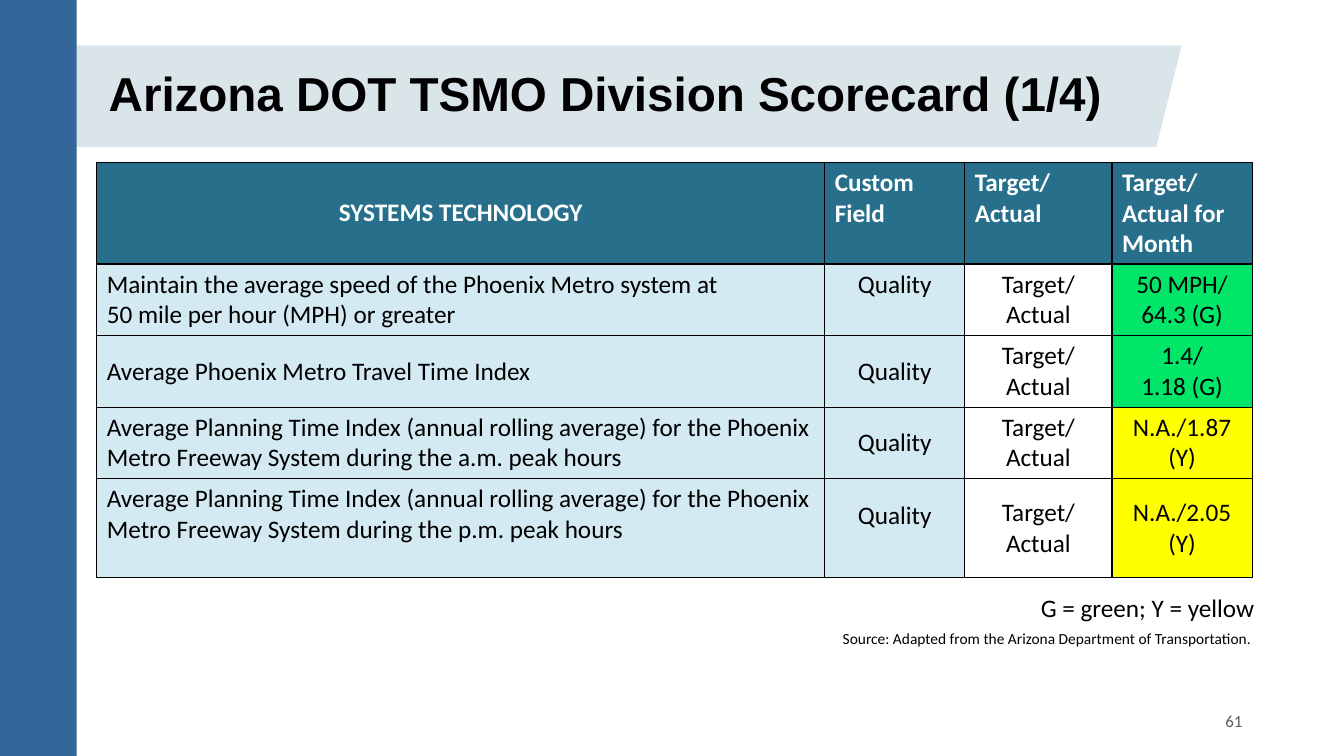
from lxml.etree import SubElement
from pptx import Presentation
from pptx.dml.color import RGBColor
from pptx.enum.shapes import MSO_SHAPE as Shape
from pptx.enum.text import MSO_ANCHOR as Anchor, PP_ALIGN as Align
from pptx.oxml.ns import qn
from pptx.util import Inches, Pt


def paint(color_format, color):
    color_format.rgb = RGBColor.from_string(color)


def write(frame, text, size, color, align, bold=False, font="Calibri"):
    for number, line in enumerate(text.split("\n")):
        para = frame.paragraphs[0] if number == 0 else frame.add_paragraph()
        para.alignment = align
        for part_number, part in enumerate(line.split("\v")):
            if part_number:
                para.add_line_break()
            span = para.add_run()
            span.text = part
            span.font.name = font
            span.font.size = Pt(size)
            span.font.bold = bold
            paint(span.font.color, color)


deck = Presentation()
deck.slide_width = Inches(13.33)
deck.slide_height = Inches(7.5)
page = deck.slides.add_slide(deck.slide_layouts[6])

for preset, left, top, width, height, color in [
    (Shape.PARALLELOGRAM, 0.24, 0.45, 11.48, 1.01, "DAE5EA"),
    (Shape.RECTANGLE, 0, 0, 0.76, 7.5, "336699"),
]:
    panel = page.shapes.add_shape(
        preset, Inches(left), Inches(top), Inches(width), Inches(height))
    panel.shadow.inherit = False
    panel.fill.solid()
    paint(panel.fill.fore_color, color)
    panel.line.fill.background()

for left, top, width, height, text, size, color, align, anchor, bold, font in [
    (0.98, 0.65, 10.3, 0.45, "Arizona DOT TSMO Division Scorecard (1/4)",
     34, "000000", Align.LEFT, Anchor.TOP, True, "Arial"),
    (9.06, 5.83, 3.48, 0.4, "G = green; Y = yellow",
     18, "000000", Align.RIGHT, Anchor.TOP, False, "Calibri"),
    (8.11, 6.19, 4.4, 0.29,
     "Source: Adapted from the Arizona Department of Transportation.",
     11, "000000", Align.RIGHT, Anchor.TOP, False, "Calibri"),
    (9.42, 6.95, 3, 0.4, "61",
     12, "595959", Align.RIGHT, Anchor.MIDDLE, False, "Calibri"),
]:
    box = page.shapes.add_textbox(
        Inches(left), Inches(top), Inches(width), Inches(height))
    frame = box.text_frame
    frame.word_wrap = True
    frame.vertical_anchor = anchor
    write(frame, text, size, color, align, bold, font)
    frame.paragraphs[0].line_spacing = 0.9 if bold else 1.0

GREEN, YELLOW = "01E669", "FFFF00"
planning = ("Average Planning Time Index (annual rolling average) for the "
            "Phoenix Metro Freeway System during the {} peak hours")
measures = [
    ("Maintain the average speed of the Phoenix Metro system at "
     "\v50 mile per hour (MPH) or greater", "50 MPH/\n64.3 (G)", GREEN),
    ("Average Phoenix Metro Travel Time Index", "1.4/\n1.18 (G)", GREEN),
    (planning.format("a.m."), "N.A./1.87 (Y)", YELLOW),
    (planning.format("p.m."), "N.A./2.05 (Y)", YELLOW),
]
rows = [["SYSTEMS TECHNOLOGY", "Custom Field", "Target/ Actual",
         "Target/ Actual for Month"]]
rows += [[name, "Quality", "Target/\nActual", result]
         for name, result, status in measures]
column_widths = [7.22, 1.39, 1.46, 1.39]
row_heights = [1.01, 0.71, 0.71, 0.71, 0.98]
top_anchored = {(0, 1), (0, 2), (0, 3), (1, 1), (4, 0)}

table = page.shapes.add_table(
    len(rows), len(column_widths), Inches(0.96), Inches(1.61),
    Inches(sum(column_widths)), Inches(sum(row_heights))).table
for column, width in zip(table.columns, column_widths):
    column.width = Inches(width)
for row, height in zip(table.rows, row_heights):
    row.height = Inches(height)

for r, row in enumerate(rows):
    for c, text in enumerate(row):
        cell = table.cell(r, c)
        header = r == 0
        centered = (c == 0) if header else (c > 0)
        write(cell.text_frame, text, 18, "FFFFFF" if header else "000000",
              Align.CENTER if centered else Align.LEFT, header)
        cell.vertical_anchor = Anchor.TOP if (r, c) in top_anchored else Anchor.MIDDLE
        properties = cell._tc.get_or_add_tcPr()
        for side in ("a:lnL", "a:lnR", "a:lnT", "a:lnB"):
            border = SubElement(properties, qn(side), w=str(Pt(1)))
            fill = SubElement(border, qn("a:solidFill"))
            SubElement(fill, qn("a:srgbClr"), val="000000")
        cell.fill.solid()
        if header:
            color = "276F8B"
        else:
            color = ["D4EAF3", "D4EAF3", "FFFFFF", measures[r - 1][2]][c]
        paint(cell.fill.fore_color, color)
table.cell(4, 1).margin_bottom = Inches(0.29)

deck.save("out.pptx")
